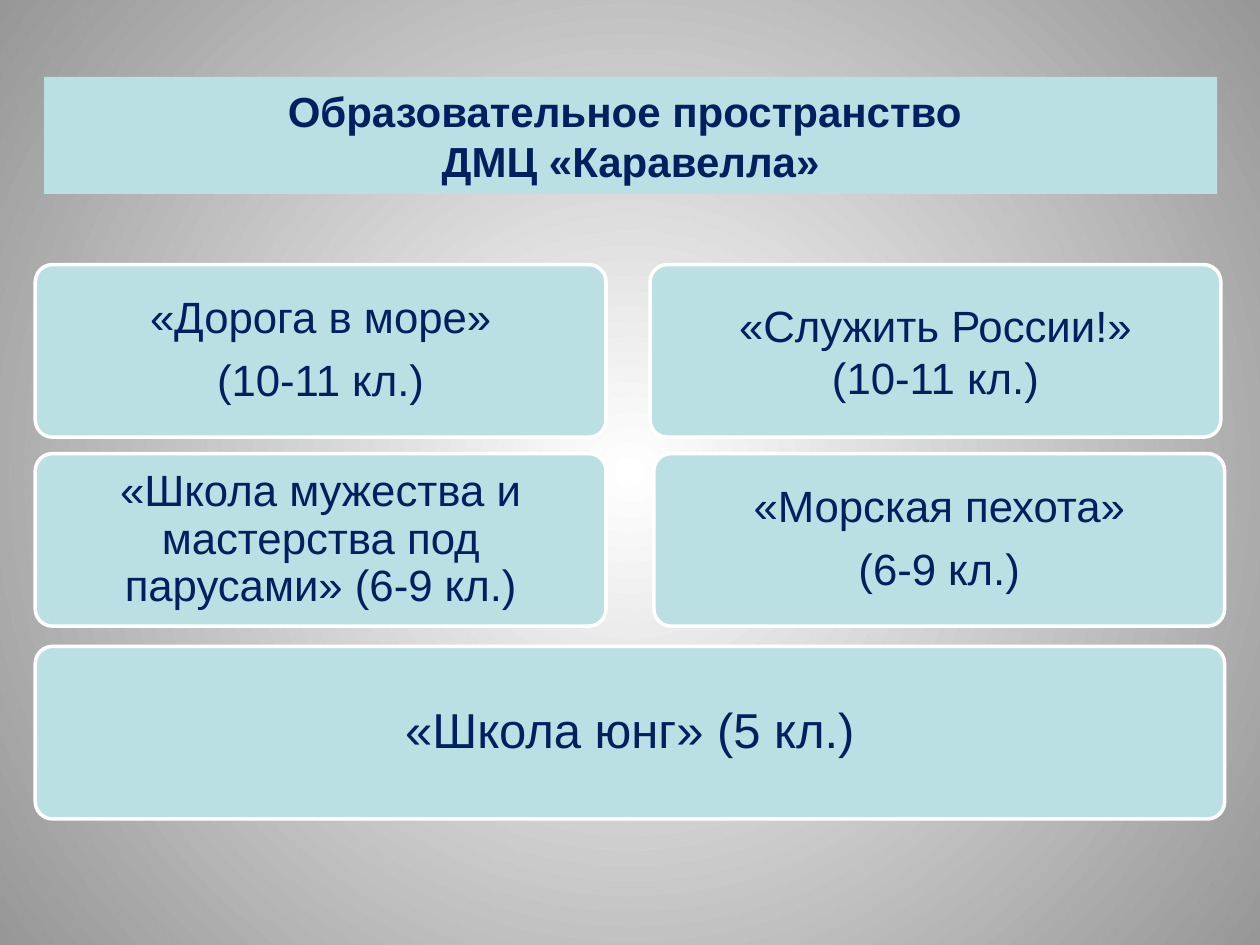
from lxml import etree
from pptx import Presentation
from pptx.dml.color import RGBColor
from pptx.enum.shapes import MSO_SHAPE
from pptx.enum.text import MSO_ANCHOR, PP_ALIGN
from pptx.oxml.ns import qn
from pptx.util import Inches, Pt

ROUND = MSO_SHAPE.ROUNDED_RECTANGLE
MIDDLE = MSO_ANCHOR.MIDDLE
CENTER = PP_ALIGN.CENTER
HEX = {"light": "FFFFFF", "gray": "979797", "aqua": "BBE0E3", "navy": "002060"}
RGB = {name: RGBColor.from_string(code) for name, code in HEX.items()}

deck = Presentation()
deck.slide_width, deck.slide_height = Inches(10), Inches(7.5)
slide = deck.slides.add_slide(deck.slide_layouts[5])


def style(para, size, bold=False):
    para.alignment = CENTER
    para.font.name = "Arial"
    para.font.size = Pt(size)
    para.font.bold = bold
    para.font.color.rgb = RGB["navy"]


# Background: radial gradient from the centre
fill = slide.background.fill
fill.gradient()
for stop, name, pos in zip(fill.gradient_stops, ("light", "gray"), (0, 1)):
    stop.color.rgb = RGB[name]
    stop.position = pos
grad = slide.background._cSld.find(".//" + qn("a:gradFill"))
grad.remove(grad.find(qn("a:lin")))
ring = etree.SubElement(grad, qn("a:path"), {"path": "circle"})
etree.SubElement(ring, qn("a:fillToRect"), dict.fromkeys("ltrb", "50000"))

# Title band
title = slide.shapes.title
title.left, title.top = Inches(0.35), Inches(0.61)
title.width, title.height = Inches(9.31), Inches(0.93)
title.fill.solid()
title.fill.fore_color.rgb = RGB["aqua"]
title.text_frame.text = "Образовательное пространство \vДМЦ «Каравелла»"
title.text_frame.vertical_anchor = MIDDLE
style(title.text_frame.paragraphs[0], 24, True)

# School cards: left, row, width, size, tight spacing, lines
LEFT, RIGHT, HALF, FULL = 0.28, 5.19, 4.53, 9.44
ROWS, HIGH = (2.1, 3.6, 5.13), 1.37
cards = [
    (LEFT, 2, FULL, 28, True, ["«Школа юнг» (5 кл.)"]),
    (LEFT, 1, HALF, 25, True,
     ["«Школа мужества и мастерства под парусами» (6-9 кл.)"]),
    (LEFT, 0, HALF, 25, True, ["«Дорога в море»", "(10-11 кл.)"]),
    (RIGHT, 1, HALF, 25, True, ["«Морская пехота»", "(6-9 кл.)"]),
    (RIGHT - 0.03, 0, HALF, 25, False, ["«Служить России!»", "(10-11 кл.)"]),
]
for left, row, width, size, tight, lines in cards:
    card = slide.shapes.add_shape(
        ROUND, Inches(left), Inches(ROWS[row]), Inches(width), Inches(HIGH))
    card.adjustments[0] = 0.1
    card.shadow.inherit = False
    card.fill.solid()
    card.fill.fore_color.rgb = RGB["aqua"]
    card.line.color.rgb = RGB["light"]
    card.line.width = Pt(2)

    frame = card.text_frame
    frame.word_wrap = True
    frame.vertical_anchor = MIDDLE
    frame.margin_left = frame.margin_right = Inches(0.1)
    frame.margin_top = frame.margin_bottom = Inches(0.1)
    frame.text = "\n".join(lines)
    for para in frame.paragraphs:
        style(para, size)
        if tight:
            para.line_spacing = 0.9
            para.space_after = Pt(0.35 * size)

deck.save("out.pptx")
